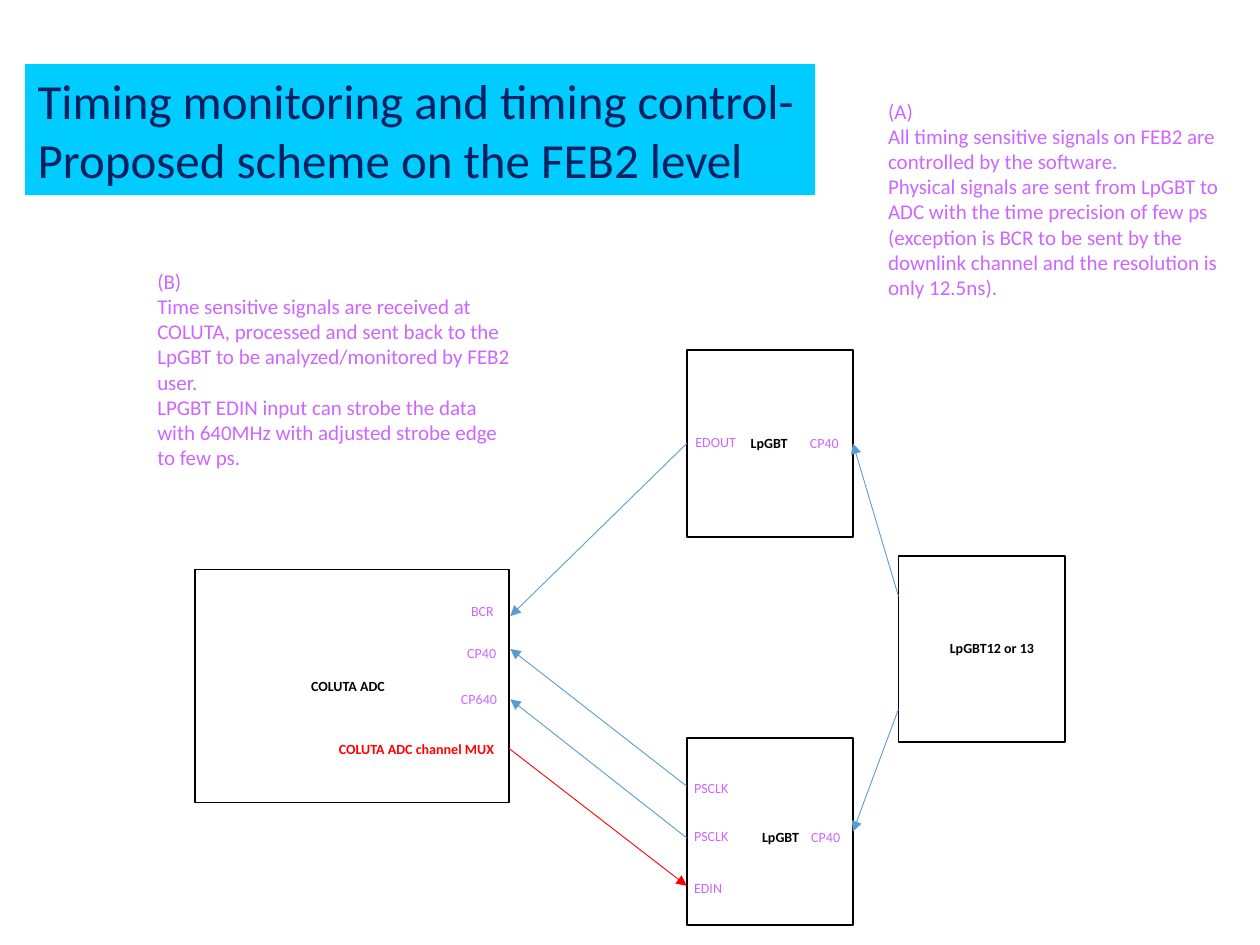
"""Build the FEB2 timing scheme slide on a grid of 100 columns by 75 rows."""
from pptx import Presentation
from pptx.dml.color import RGBColor
from pptx.enum.shapes import MSO_CONNECTOR as Link, MSO_SHAPE as Form
from pptx.enum.text import MSO_ANCHOR as Anchor, MSO_AUTO_SIZE as Fit, PP_ALIGN as Align
from pptx.oxml.ns import qn
from pptx.util import Inches, Pt
from lxml.etree import SubElement

BLACK = RGBColor(0x00, 0x00, 0x00)
WHITE = RGBColor(0xFF, 0xFF, 0xFF)
RED = RGBColor(0xFF, 0x00, 0x00)
BLUE = RGBColor(0x5B, 0x9B, 0xD5)
NAVY = RGBColor(0x00, 0x20, 0x60)
CYAN = RGBColor(0x00, 0xCC, 0xFF)
VIOLET = RGBColor(0xCC, 0x66, 0xFF)

deck = Presentation()
deck.slide_width, deck.slide_height = Inches(10), Inches(7.5)
COL, ROW = deck.slide_width / 100, deck.slide_height / 75
slide = deck.slides.add_slide(deck.slide_layouts[6])
shapes = slide.shapes


def grid(x, y, *more):
    """Turn columns and rows into slide lengths."""
    return [int(n * (ROW if i % 2 else COL)) for i, n in enumerate((x, y, *more))]


def write(text, at, size=8, color=VIOLET, bold=False, wrap=False, fill=None):
    """Place a text box with one paragraph per line of text."""
    box = shapes.add_textbox(*grid(*at))
    if fill is not None:
        box.fill.solid()
        box.fill.fore_color.rgb = fill
    frame = box.text_frame
    frame.word_wrap = wrap
    frame.auto_size = Fit.SHAPE_TO_FIT_TEXT
    frame.vertical_anchor = Anchor.TOP
    frame.text = text
    for para in frame.paragraphs:
        para.alignment = Align.LEFT
        font = para.runs[0].font
        font.name, font.size, font.bold = "Calibri", Pt(size), bold
        font.color.rgb = color


write("Timing monitoring and timing control-\nProposed scheme on the FEB2 level",
      (2, 5.1, 62.7, 10.4), size=28, color=NAVY, fill=CYAN)

CHIP = 13.2, 14.8
blocks = [
    (15.5, 45.2, 24.9, 18.5),
    (54.5, 58.6, *CHIP),
    (54.5, 27.8, *CHIP),
    (71.3, 44.1, *CHIP),
]
for at in blocks:
    block = shapes.add_shape(Form.RECTANGLE, *grid(*at))
    block.shadow.inherit = False
    block.fill.solid()
    block.fill.fore_color.rgb = WHITE
    block.line.color.rgb = BLACK
    block.line.width = Pt(1)

arrows = [
    (54.5, 35.2, 40.5, 48.9, BLUE),
    (54.5, 62.4, 40.5, 51.5, BLUE),
    (54.5, 66.5, 40.5, 55.5, BLUE),
    (71.3, 47.3, 67.7, 35.2, BLUE),
    (71.3, 56.3, 67.7, 66, BLUE),
    (40.4, 59.4, 54.5, 70.3, RED),
]
for *ends, color in arrows:
    arrow = shapes.add_connector(Link.STRAIGHT, *grid(*ends))
    arrow.line.color.rgb = color
    arrow.line.width = Pt(0.5)
    SubElement(arrow.line._get_or_add_ln(), qn("a:tailEnd"), type="triangle")
    SubElement(arrow._element.spPr, qn("a:effectLst"))

pins = [
    ("CP40", 63.4, 65.3, 4.3),
    ("BCR", 36.4, 47.3, 3.8),
    ("CP640", 35.6, 54.3, 4.9),
    ("CP40", 36.1, 50.7, 4.3),
    ("CP40", 63.3, 34, 4.3),
    ("PSCLK", 54.1, 65.2, 4.8),
    ("PSCLK", 54.1, 61.4, 4.8),
    ("EDOUT", 54.2, 33.9, 5.2),
    ("EDIN", 54.1, 69.3, 4.2),
]
for text, x, y, wide in pins:
    write(text, (x, y, wide, 2.4))

names = [
    ("COLUTA ADC", 23.7, 53.3, 8.1, BLACK),
    ("LpGBT", 58.6, 34, 5, BLACK),
    ("LpGBT", 59.5, 65.3, 5, BLACK),
    ("LpGBT12 or 13", 74.4, 50.3, 8.7, BLACK),
    ("COLUTA ADC channel MUX", 25.9, 58.3, 14.5, RED),
]
for text, x, y, wide, color in names:
    write(text, (x, y, wide, 2.4), color=color, bold=True)

write("(A)\n"
      "All timing sensitive signals on FEB2 are controlled by the software.\n"
      "Physical signals are sent from LpGBT to ADC with the time precision of few ps\n"
      "(exception is BCR to be sent by the downlink channel and the resolution is "
      "only 12.5ns).",
      (69.5, 7.3, 30, 19.2), size=12, wrap=True)
write("(B)\n"
      "Time sensitive signals are received at COLUTA, processed and sent back to the "
      "LpGBT to be analyzed/monitored by FEB2 user.\n"
      "LPGBT EDIN input can strobe the data with 640MHz with adjusted strobe edge "
      "to few ps.",
      (11.5, 20.8, 30, 21.2), size=12, wrap=True)

deck.save("out.pptx")
